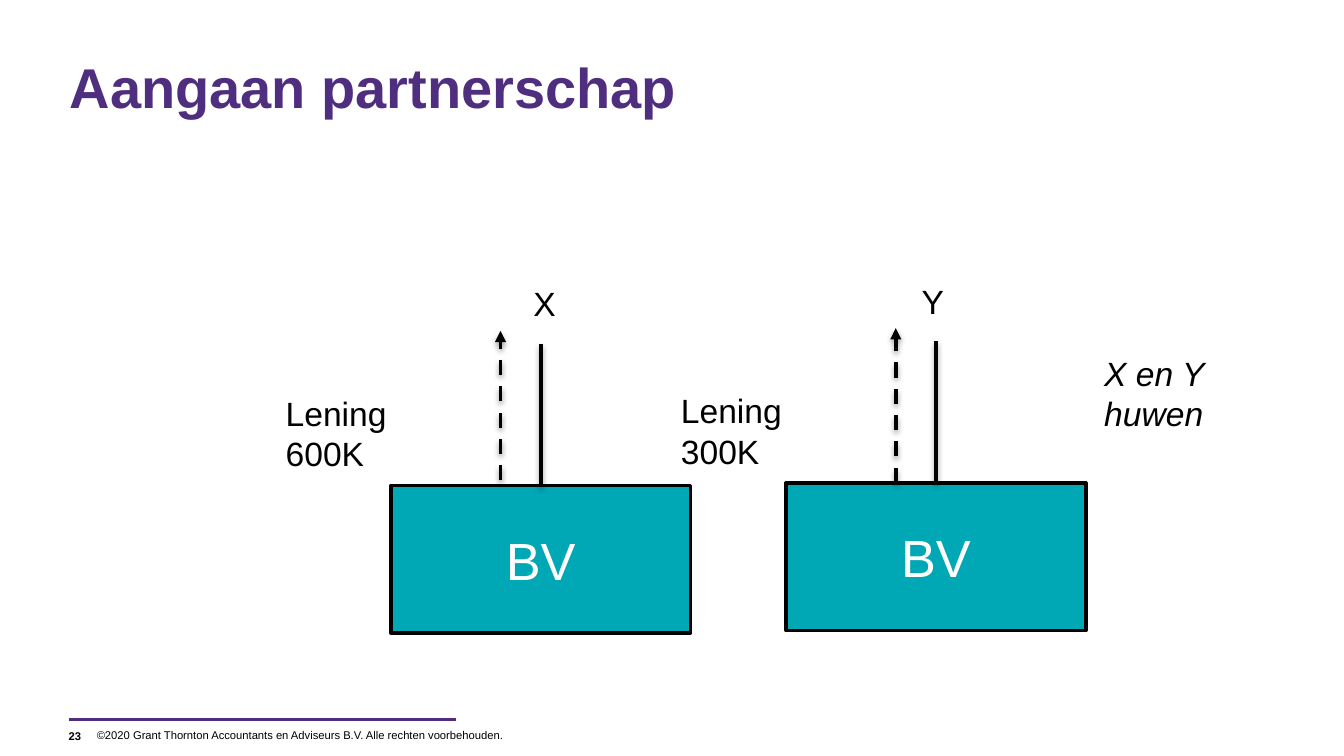
from lxml import etree
from pptx import Presentation
from pptx.dml.color import RGBColor
from pptx.enum.dml import MSO_LINE
from pptx.enum.shapes import MSO_CONNECTOR, MSO_SHAPE
from pptx.enum.text import MSO_ANCHOR as Anchor, PP_ALIGN as Align
from pptx.oxml import parse_xml
from pptx.oxml.ns import nsdecls, qn
from pptx.util import Cm, Pt

PURPLE, TEAL, BLACK, WHITE = "4F2D7F", "00A7B5", "000000", "FFFFFF"
COMPANY_WIDTH, COMPANY_HEIGHT = 5.66, 2.79
SHADOW = (
    f'<a:outerShdw {nsdecls("a")} blurRad="{Pt(3.1)}" dist="{Pt(1.6)}" '
    'dir="5400000" rotWithShape="0"><a:srgbClr val="000000">'
    '<a:alpha val="38000"/></a:srgbClr></a:outerShdw>'
)


def color(value):
    return RGBColor.from_string(value)


def write(frame, text, size, ink=BLACK, bold=False, italic=False):
    para = frame.paragraphs[0]
    span = para.add_run()
    span.text = text
    font = span.font
    font.name, font.size = "Arial", Pt(size)
    font.bold, font.italic = bold, italic
    font.color.rgb = color(ink)
    return para


def add_text(page, box, text, size, insets=(0.25, 0.13), anchor=Anchor.TOP, **style):
    """Place text in box (left, top, width, height); insets are side and top/bottom."""
    frame = page.shapes.add_textbox(*map(Cm, box)).text_frame
    frame.word_wrap = True
    frame.vertical_anchor = anchor
    frame.margin_left = frame.margin_right = Cm(insets[0])
    frame.margin_top = frame.margin_bottom = Cm(insets[1])
    write(frame, text, size, **style)


def add_line(page, start, end, ink=BLACK, width=2, dashed_arrow=False, shadow=True):
    line = page.shapes.add_connector(
        MSO_CONNECTOR.STRAIGHT, *map(Cm, (*start, *end)))
    line.line.color.rgb = color(ink)
    line.line.width = Pt(width)
    if dashed_arrow:
        line.line.dash_style = MSO_LINE.DASH
        outline = line.line._get_or_add_ln()
        etree.SubElement(outline, qn("a:tailEnd"), type="triangle")
    effects = etree.SubElement(line._element.spPr, qn("a:effectLst"))
    if shadow:
        effects.append(parse_xml(SHADOW))


def add_company(page, left, top, owner, owner_at, loan, arrow_gap=0):
    """Draw a company at left, top with its owner and the loan to that owner above it."""
    company = page.shapes.add_shape(
        MSO_SHAPE.RECTANGLE, *map(Cm, (left, top, COMPANY_WIDTH, COMPANY_HEIGHT)))
    company.shadow.inherit = False
    company.fill.solid()
    company.fill.fore_color.rgb = color(TEAL)
    company.line.color.rgb = color(BLACK)
    company.line.width = Pt(2)
    company.text_frame.vertical_anchor = Anchor.MIDDLE
    write(company.text_frame, "BV", 28, WHITE).alignment = Align.CENTER

    add_text(page, (left + owner_at, top - 3.95, 2.82, 1.02), owner, 18)
    center = left + COMPANY_WIDTH / 2
    add_line(page, (center, top), (center, top - 2.67))
    arrow = center - 0.76
    add_line(page, (arrow, top - arrow_gap), (arrow, top - 2.92), dashed_arrow=True)
    add_text(page, (left - 2.24, top - 1.88, 3.91, 1.02), loan, 18)


def add_footer(page, left, top):
    add_line(page, (left, top), (left + 7.31, top), PURPLE, 1.5, shadow=False)
    add_text(page, (left, top + 0.05, 0.51, 0.51), "23", 6, (0, 0),
             Anchor.MIDDLE, bold=True)
    add_text(page, (left + 0.53, top + 0.03, 8.36, 0.51),
             "©2020 Grant Thornton Accountants en Adviseurs B.V. "
             "Alle rechten voorbehouden.", 6, (0, 0.13), Anchor.MIDDLE)


def main():
    deck = Presentation()
    deck.slide_width, deck.slide_height = Cm(25.4), Cm(14.28)
    page = deck.slides.add_slide(deck.slide_layouts[6])
    add_text(page, (1.32, 0.99, 22.78, 2.34), "Aangaan partnerschap", 30,
             (0, 0), ink=PURPLE, bold=True)
    add_company(page, 7.39, 9.17, "X", 2.44, "Lening 600K", arrow_gap=0.1)
    add_company(page, 14.86, 9.12, "Y", 2.31, "Lening 300K")
    add_text(page, (20.62, 6.53, 3.91, 1.8), "X en Y huwen", 18, italic=True)
    add_footer(page, 1.3, 13.59)
    deck.save("out.pptx")


if __name__ == "__main__":
    main()
